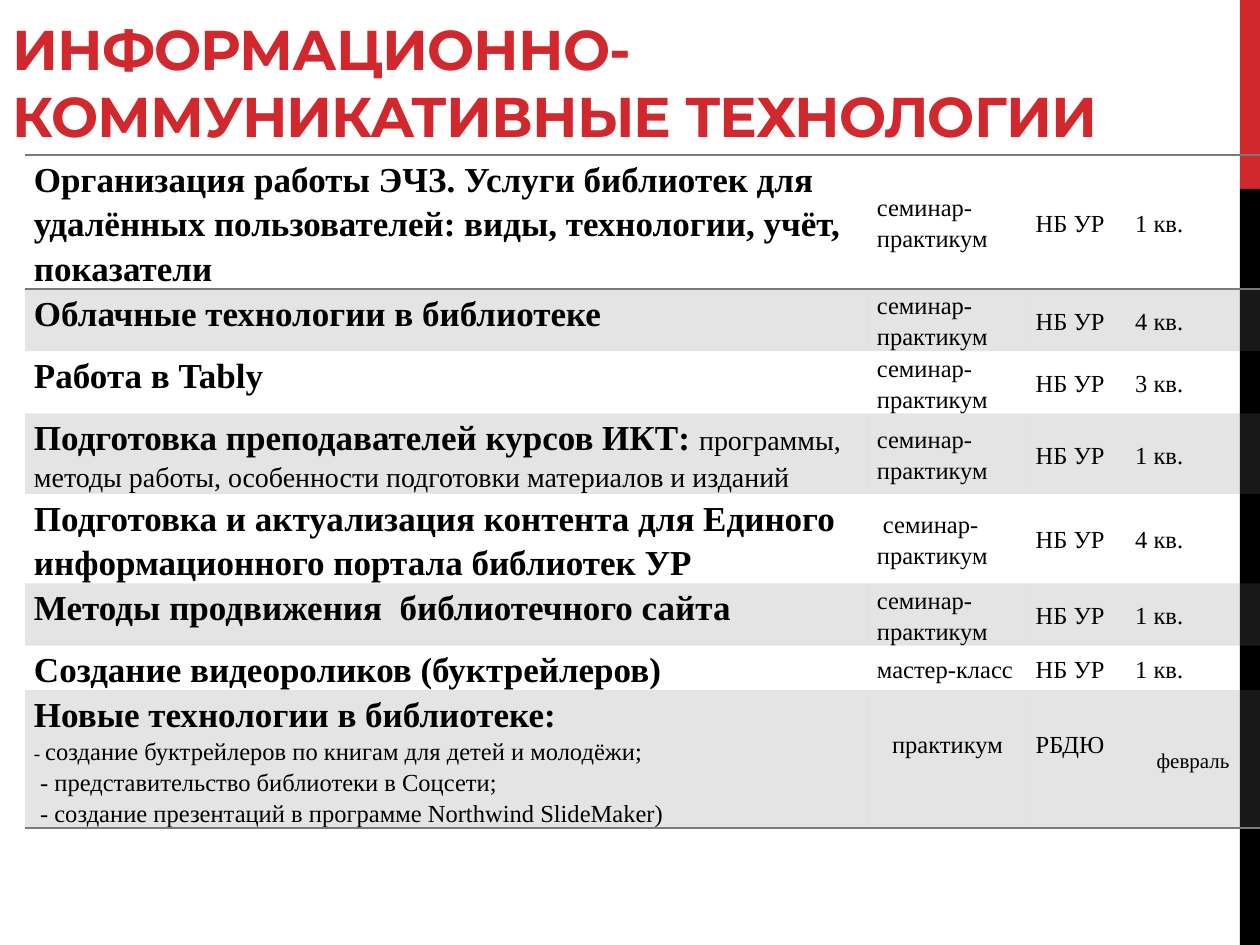
from lxml import etree
from pptx import Presentation, util as u
from pptx.dml.color import RGBColor
from pptx.enum import shapes, text
from pptx.oxml.ns import qn

COLORS = {"red": "D1282E", "black": "000000", "grey": "7A7A7A"}
FONT = "Times New Roman"
TITLE = "ИНФОРМАЦИОННО-КОММУНИКАТИВНЫЕ ТЕХНОЛОГИИ"
WORKSHOP, LIBRARY = "семинар-практикум", "НБ УР"

COURSES = [
    ("Организация работы ЭЧЗ. Услуги библиотек для удалённых пользователей: "
     "виды, технологии, учёт, показатели", WORKSHOP, LIBRARY, "1 кв."),
    ("Облачные технологии в библиотеке", WORKSHOP, LIBRARY, "4 кв."),
    ("Работа в Tably", WORKSHOP, LIBRARY, "3 кв."),
    ("Подготовка преподавателей курсов ИКТ: ", WORKSHOP, LIBRARY, "1 кв."),
    ("Подготовка и актуализация контента для Единого информационного "
     "портала библиотек УР", " " + WORKSHOP, LIBRARY, "4 кв."),
    ("Методы продвижения  библиотечного сайта", WORKSHOP, LIBRARY, "1 кв."),
    ("Создание видеороликов (буктрейлеров)", "мастер-класс", LIBRARY, "1 кв."),
    ("Новые технологии в библиотеке:", "практикум", "РБДЮ", "февраль"),
]
TRAINER_DETAILS = "программы, методы работы, особенности подготовки материалов и изданий"
TOPICS = [
    [("- ", 11), ("создание буктрейлеров по книгам для детей и молодёжи;", 14)],
    [(" - представительство библиотеки в Соцсети;", 14)],
    [(" - создание презентаций в программе Northwind SlideMaker)", 14)],
]
COLUMNS = [6.69, 1.26, 0.79, 1.06]
ROWS = [0.35, 0.3, 0.3, 0.33, 0.3, 0.3, 0.31, 1.03]
TRAINERS, LAST = 3, len(COURSES) - 1


def color(name):
    return RGBColor.from_string(COLORS[name])


def add_bar(page, top, height, name):
    bar = page.shapes.add_shape(shapes.MSO_SHAPE.RECTANGLE, u.Inches(9.84),
                                u.Inches(top), u.Inches(0.16), u.Inches(height))
    bar.shadow.inherit = False
    bar.fill.solid()
    bar.fill.fore_color.rgb = color(name)
    bar.line.fill.background()


def write(para, spans, bold=False):
    para.line_spacing = 1.15
    para.font.name = FONT
    para.font.color.rgb = color("black")
    for words, size in spans:
        span = para.add_run()
        span.text = words
        span.font.name = FONT
        span.font.size = u.Pt(size)
        span.font.bold = bold
        span.font.color.rgb = color("black")


def add_border(cell, side):
    line = etree.SubElement(cell._tc.get_or_add_tcPr(), qn("a:" + side), w=str(u.Pt(1)))
    fill = etree.SubElement(line, qn("a:solidFill"))
    etree.SubElement(fill, qn("a:srgbClr"), val=COLORS["grey"])


def shade(cell):
    cell.fill.solid()
    cell.fill.fore_color.rgb = color("grey")
    tint = cell._tc.tcPr.find(qn("a:solidFill")).find(qn("a:srgbClr"))
    etree.SubElement(tint, qn("a:alpha"), val="20000")


def style_cell(cell, row, column):
    cell.margin_left = cell.margin_right = u.Inches(0.07)
    cell.margin_top = cell.margin_bottom = 0
    if column:
        cell.vertical_anchor = text.MSO_ANCHOR.MIDDLE
    if row == 0:
        add_border(cell, "lnT")
    if row in (0, LAST):
        add_border(cell, "lnB")
    if row % 2:
        shade(cell)
    else:
        cell.fill.background()


def add_courses(page):
    frame = page.shapes.add_table(len(ROWS), len(COLUMNS), u.Inches(0.2), u.Inches(1.23),
                                  u.Inches(sum(COLUMNS)), u.Inches(sum(ROWS)))
    table = frame.table
    table.first_row = table.horz_banding = False
    table._tbl.tblPr.find(qn("a:tableStyleId")).text = "{2D5ABB26-0587-4C30-8999-92F81FD0307C}"
    for column, width in zip(table.columns, COLUMNS):
        column.width = u.Inches(width)
    for row, height in enumerate(ROWS):
        table.rows[row].height = u.Inches(height)
        for column, words in enumerate(COURSES[row]):
            cell = table.cell(row, column)
            style_cell(cell, row, column)
            size = 20 if column == 0 else 12 if words == "февраль" else 14
            write(cell.text_frame.paragraphs[0], [(words, size)], column == 0)
    write(table.cell(TRAINERS, 0).text_frame.paragraphs[0], [(TRAINER_DETAILS, 16)])
    for topic in TOPICS:
        write(table.cell(LAST, 0).text_frame.add_paragraph(), topic)
    for column in (1, 3):
        para = table.cell(LAST, column).text_frame.paragraphs[0]
        para.alignment = text.PP_ALIGN.CENTER
    for column in (1, 2):
        table.cell(LAST, column).margin_bottom = u.Inches(0.25)
    frame.height = u.Inches(5.79)


def add_title(page):
    box = page.shapes.title
    box.left, box.top, box.width, box.height = (u.Inches(n) for n in (0, 0.3, 10, 0.93))
    frame = box.text_frame
    frame.text = TITLE
    frame.word_wrap = True
    frame.auto_size = text.MSO_AUTO_SIZE.NONE
    frame.vertical_anchor = text.MSO_ANCHOR.BOTTOM
    para = frame.paragraphs[0]
    para.alignment = text.PP_ALIGN.LEFT
    para.font.name = "Montserrat"
    para.font.size = u.Pt(32)
    para.font.bold = True
    para.font.color.rgb = color("red")
    para.runs[0].font._element.set("spc", "-60")


def main():
    deck = Presentation()
    deck.slide_width, deck.slide_height = u.Inches(10), u.Inches(7.5)
    page = deck.slides.add_slide(deck.slide_layouts[5])
    add_title(page)
    add_bar(page, 0, 1.5, "red")
    add_bar(page, 1.5, 6, "black")
    add_courses(page)
    deck.save("out.pptx")


if __name__ == "__main__":
    main()
